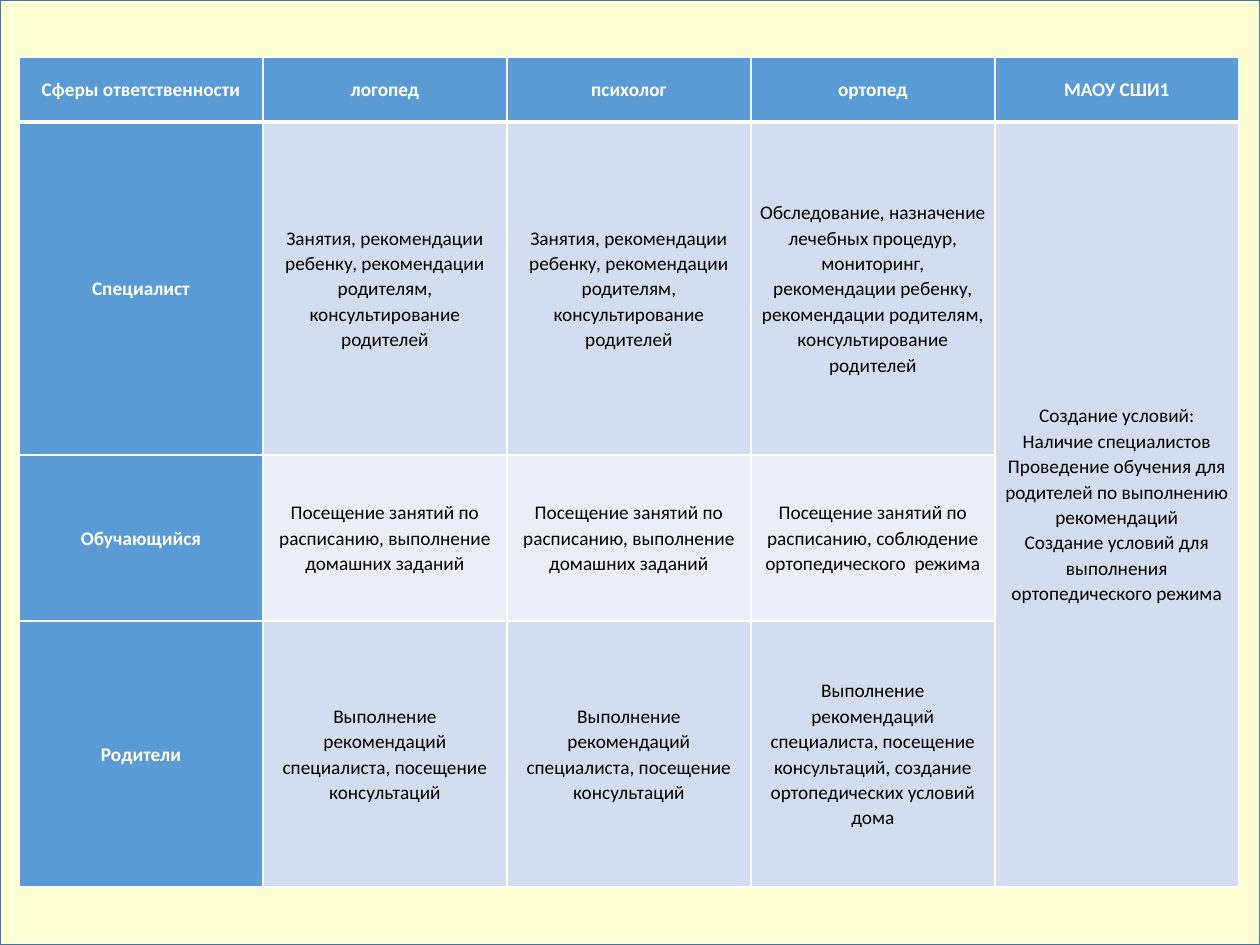
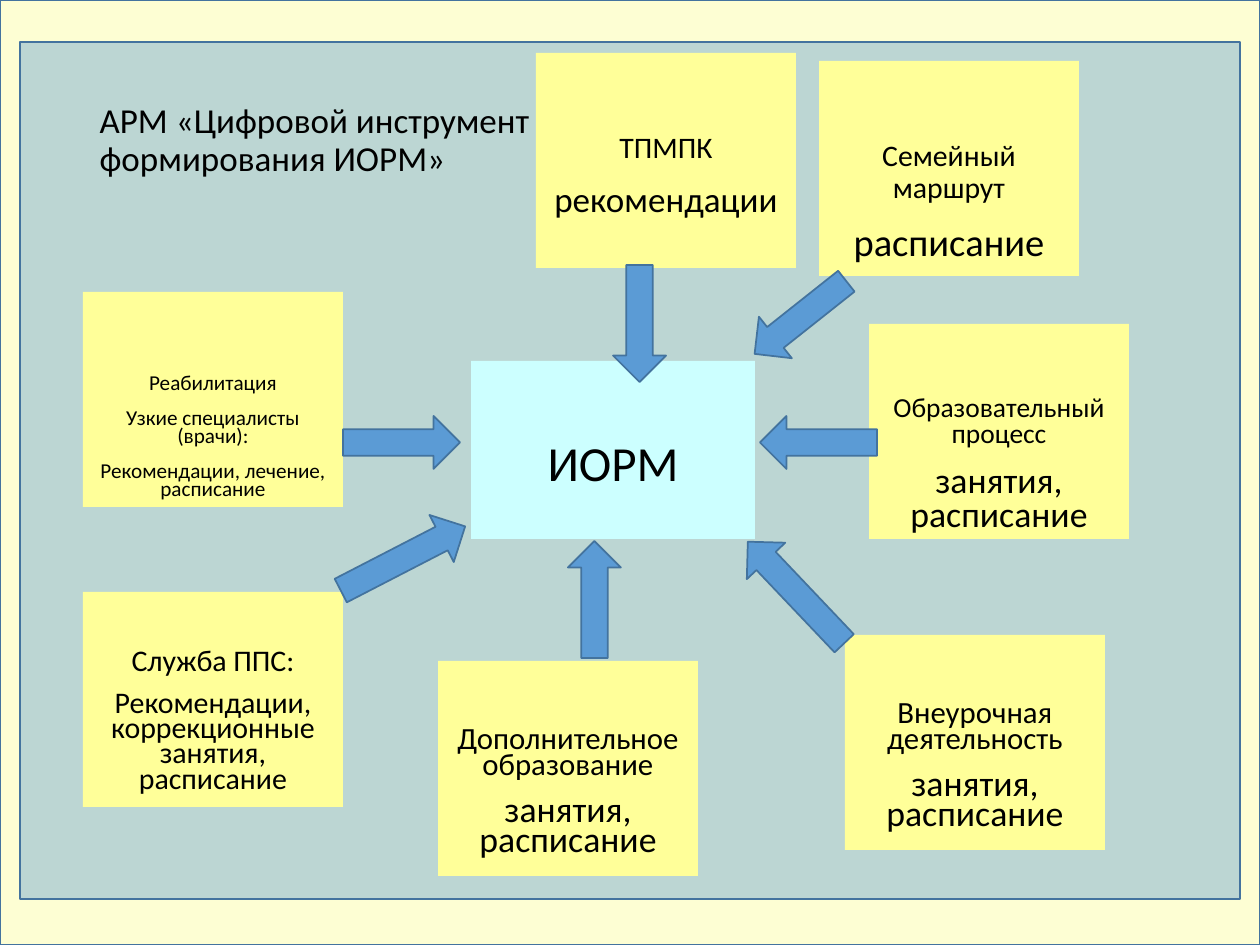
import pptx
import pptx.dml.color
import pptx.enum.shapes
import pptx.enum.text
import pptx.oxml
import pptx.oxml.ns
import pptx.util
from lxml import etree

PX = 914400 / 126
FONT = "Calibri"
BLACK, WHITE = "000000", "FFFFFF"
CREAM, BLUE, OUTLINE = "FCFEAC", "5B9BD5", "43739E"
YELLOW, CYAN = "FFFF99", "CCFFFF"
BANDS = ("D2DEEF", "EAEFF7")
SHAPE = pptx.enum.shapes.MSO_SHAPE
ALIGN = pptx.enum.text.PP_ALIGN
ANCHOR = pptx.enum.text.MSO_ANCHOR
TITLE_ONLY, BLANK = 5, 6


def px(length):
    return pptx.util.Emu(round(length * PX))


def color(value):
    return pptx.dml.color.RGBColor.from_string(value)


def set_opacity(shape, percent):
    tint = shape.element.spPr.find(".//" + pptx.oxml.ns.qn("a:srgbClr"))
    etree.SubElement(tint, pptx.oxml.ns.qn("a:alpha"), val=str(percent * 1000))


def set_borders(cell, **widths):
    """Draw white cell borders; widths are points by side letter (L, R, T, B)."""
    properties = cell._tc.get_or_add_tcPr()
    for side in "LRTB":
        properties.append(pptx.oxml.parse_xml(
            f'<a:ln{side} {pptx.oxml.ns.nsdecls("a")} w="{widths.get(side, 1) * 12700}">'
            f'<a:solidFill><a:srgbClr val="{WHITE}"/></a:solidFill></a:ln{side}>'))


class Builder:
    def __init__(self, deck):
        self.deck = deck
        self.page = None

    def new_page(self, layout):
        self.page = self.deck.slides.add_slide(self.deck.slide_layouts[layout])

    def fill_text(self, frame, lines, spacing, align=ALIGN.CENTER, before=0, ink=BLACK,
                  bold=False):
        """Fill a text frame from (text, size) pairs, one paragraph each."""
        frame.word_wrap = True
        for number, (text, size) in enumerate(lines):
            para = frame.add_paragraph() if number else frame.paragraphs[0]
            para.text = text
            para.alignment = align
            para.line_spacing = spacing
            para.space_before = pptx.util.Pt(before if number else 0)
            para.font.name = FONT
            para.font.size = pptx.util.Pt(size)
            para.font.bold = bold
            para.font.color.rgb = color(ink)

    def shape(self, kind, left, top, width, height, fill, line=None, opacity=100, rotation=0):
        shape = self.page.shapes.add_shape(kind, px(left), px(top), px(width), px(height))
        shape.shadow.inherit = False
        shape.rotation = rotation
        shape.fill.solid()
        shape.fill.fore_color.rgb = color(fill)
        if opacity < 100:
            set_opacity(shape, opacity)
        if line:
            shape.line.color.rgb = color(line)
            shape.line.width = pptx.util.Pt(1)
        else:
            shape.line.fill.background()
        return shape

    def master_backdrop(self):
        """Move a tinted full-page frame behind everything on the master."""
        frame = self.shape(SHAPE.RECTANGLE, 0, 0, 1260, 945, CREAM, OUTLINE, 52)
        frame.element.nvSpPr.cNvPr.set("id", "99")
        self.deck.slide_master.shapes.element.insert(2, frame.element)

    def title(self, text, left, top, width, height):
        title = self.page.shapes.title
        title.left, title.top, title.width, title.height = map(px, (left, top, width, height))
        frame = title.text_frame
        frame.auto_size = pptx.enum.text.MSO_AUTO_SIZE.NONE
        frame.vertical_anchor = ANCHOR.MIDDLE
        self.fill_text(frame, [(text, 20)], 0.9, ALIGN.LEFT)
        self.page.shapes.element.append(title.element)

    def card(self, left, top, lines, text_top, spacing, width=260, height=215, fill=YELLOW):
        frame = self.shape(SHAPE.RECTANGLE, left, top, width, height, fill).text_frame
        frame.vertical_anchor = ANCHOR.TOP
        frame.margin_top, frame.margin_bottom = px(text_top), 0
        self.fill_text(frame, lines, spacing, before=10)

    def arrow(self, left, top, length, rotation):
        self.shape(SHAPE.RIGHT_ARROW, left, top, length, 53, BLUE, OUTLINE, rotation=rotation)

    def table(self, left, top, column_width, row_heights, rows):
        columns = len(rows[0])
        grid = self.page.shapes.add_table(
            len(rows), columns, px(left), px(top),
            px(column_width * columns), px(sum(row_heights))).table
        for column in grid.columns:
            column.width = px(column_width)
        for row, height in zip(grid.rows, row_heights):
            row.height = px(height)
        for y, texts in enumerate(rows):
            for x, text in enumerate(texts):
                self.cell(grid.cell(y, x), text, y, heading=y == 0 or x == 0)
        return grid

    def cell(self, cell, text, row, heading):
        set_borders(cell, B=3 if row == 0 else 1, T=3 if row == 1 else 1)
        cell.fill.solid()
        cell.fill.fore_color.rgb = color(BLUE if heading else BANDS[(row - 1) % 2])
        cell.vertical_anchor = ANCHOR.MIDDLE
        cell.margin_left = cell.margin_right = px(8)
        cell.margin_top = cell.margin_bottom = 0
        if text:
            self.fill_text(cell.text_frame, [(line, 11) for line in text.split("\n")], 1.07,
                           ink=WHITE if heading else BLACK, bold=heading)


def responsibility_page(builder):
    lessons = ("Занятия, рекомендации ребенку, рекомендации родителям, "
               "консультирование родителей")
    homework = "Посещение занятий по расписанию, выполнение домашних заданий"
    following = "Выполнение рекомендаций специалиста, посещение консультаций"
    school = ("Создание условий:\nНаличие специалистов\n"
              "Проведение обучения для родителей по выполнению рекомендаций\n"
              "Создание условий для выполнения ортопедического режима")
    rows = [
        ("Сферы ответственности", "логопед", "психолог", "ортопед", "МАОУ СШИ1"),
        ("Специалист", lessons, lessons,
         "Обследование, назначение лечебных процедур, мониторинг, рекомендации ребенку, "
         "рекомендации родителям, консультирование родителей", school),
        ("Обучающийся", homework, homework,
         "Посещение занятий по расписанию, соблюдение ортопедического  режима", ""),
        ("Родители", following, following,
         following + ", создание ортопедических условий дома", ""),
    ]
    grid = builder.table(19, 57, 244, (65, 333, 166, 266), rows)
    grid.cell(1, 4).merge(grid.cell(3, 4))


def route_page(builder):
    builder.shape(SHAPE.RECTANGLE, 20, 42, 1220, 857, BLUE, OUTLINE, 40)
    builder.title("АРМ «Цифровой инструмент формирования ИОРМ»", 87, 50, 464, 183)
    builder.card(471, 361, [("ИОРМ", 28)], 78, 0.9, 284, 178, CYAN)

    schedule = ("занятия, расписание", 20.4)
    sources = [
        (83, 292, 84, 0.7, [("Реабилитация", 12.1), ("Узкие специалисты (врачи):", 12.1),
                            ("Рекомендации, лечение, расписание", 12.1)]),
        (83, 592, 59, 0.7, [("Служба ППС:", 17.1),
                            ("Рекомендации, коррекционные занятия, расписание", 17.1)]),
        (438, 661, 68, 0.7, [("Дополнительное образование", 17.6), schedule]),
        (845, 635, 68, 0.7, [("Внеурочная деятельность", 17.6), schedule]),
        (869, 324, 72, 0.8, [("Образовательный процесс", 15.7), schedule]),
        (819, 61, 80, 0.9, [("Семейный маршрут", 17), ("расписание", 22)]),
        (536, 53, 80, 0.9, [("ТПМПК", 17), ("рекомендации", 20)]),
    ]
    for left, top, text_top, spacing, lines in sources:
        builder.card(left, top, lines, text_top, spacing)

    for arrow in [(343, 416, 117, 0), (333, 532, 140, 332.7), (536, 573, 117, 270),
                  (726, 566, 140, 226.5), (760, 416, 117, 180), (742, 291, 117, 141.6),
                  (581, 297, 117, 90)]:
        builder.arrow(*arrow)


def main():
    deck = pptx.Presentation()
    deck.slide_width, deck.slide_height = px(1260), px(945)
    builder = Builder(deck)
    builder.new_page(BLANK)
    builder.master_backdrop()
    responsibility_page(builder)
    builder.new_page(TITLE_ONLY)
    route_page(builder)
    deck.save("out.pptx")


if __name__ == "__main__":
    main()
